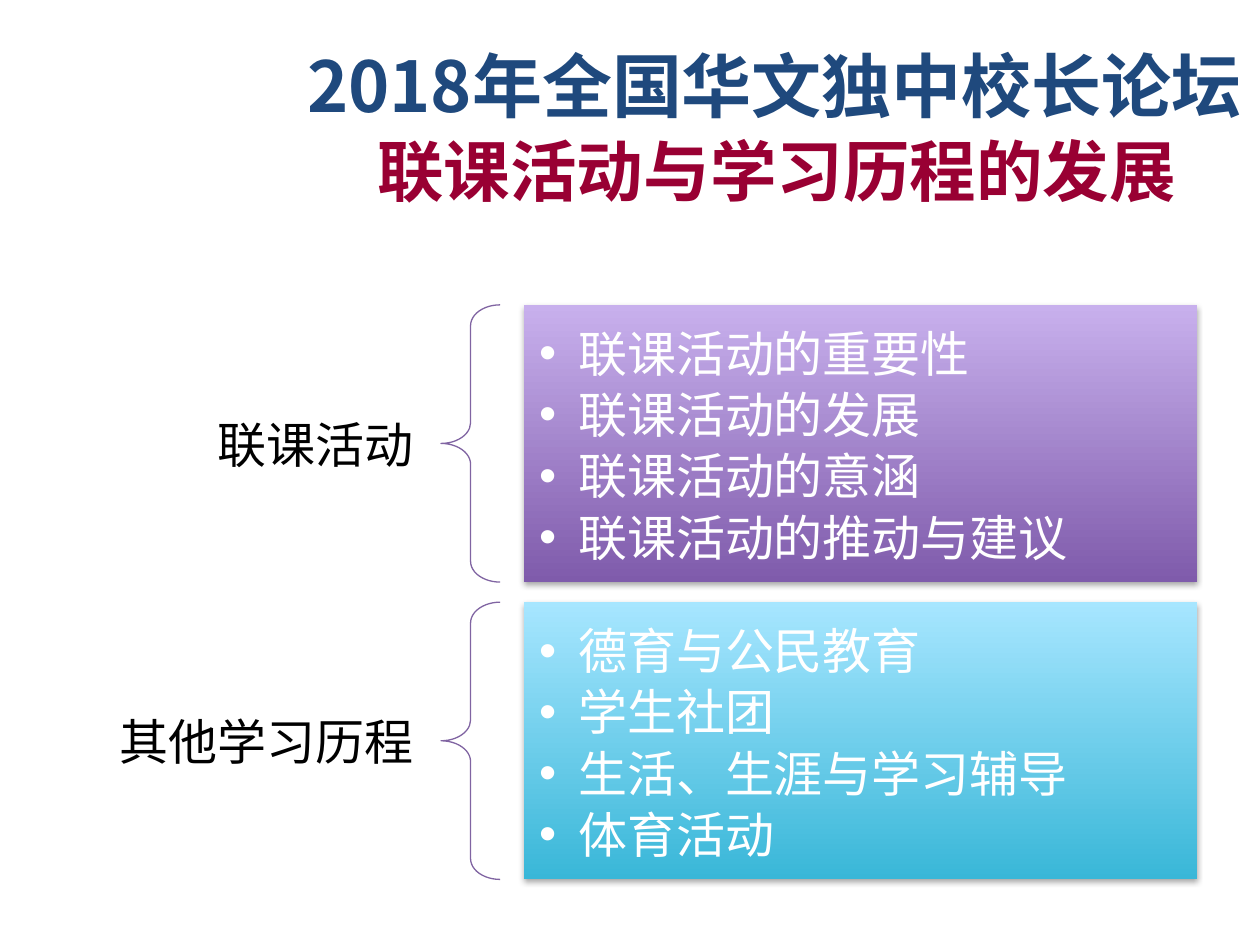
from lxml import etree
from pptx import Presentation
from pptx.dml.color import RGBColor
from pptx.enum import shapes, text
from pptx.oxml import parse_xml
from pptx.oxml.ns import qn
from pptx.util import Inches, Pt

FONT = "Noto Sans CJK SC"
NS = 'xmlns:a="http://schemas.openxmlformats.org/drawingml/2006/main"'
NAVY = RGBColor(0x1F, 0x49, 0x7D)
WINE = RGBColor(0x99, 0x00, 0x33)
BLACK = RGBColor(0, 0, 0)
WHITE = RGBColor(0xFF, 0xFF, 0xFF)
PURPLE = RGBColor(0x80, 0x64, 0xA2)
LILAC = (RGBColor(0x7F, 0x5B, 0xAB), RGBColor(0xC8, 0xB0, 0xED))
AQUA = (RGBColor(0x39, 0xB7, 0xD8), RGBColor(0xA7, 0xE6, 0xFF))
SHADOW = f"""<a:effectLst {NS}><a:outerShdw blurRad="{Pt(3.1)}" dist="{Pt(1.8)}"
 dir="5400000" rotWithShape="0"><a:srgbClr val="000000"><a:alpha val="35000"/>
</a:srgbClr></a:outerShdw></a:effectLst>"""
GROUPS = [
    ("联课活动", LILAC,
     ["联课活动的重要性", "联课活动的发展", "联课活动的意涵", "联课活动的推动与建议"]),
    ("其他学习历程", AQUA,
     ["德育与公民教育", "学生社团", "生活、生涯与学习辅导", "体育活动"]),
]


def style(para, size, color, bold=False):
    """Format every run of a paragraph."""
    for run in para.runs:
        font = run.font
        font.name, font.size, font.bold = FONT, Pt(size), bold
        font.color.rgb = color
        etree.SubElement(font._element, qn("a:ea"), typeface=FONT)


def frame(shape, anchor, side, edge):
    """Set wrapping, anchor and margins, and return the text frame."""
    tf = shape.text_frame
    tf.word_wrap = True
    tf.auto_size = text.MSO_AUTO_SIZE.NONE
    tf.vertical_anchor = anchor
    tf.margin_left = tf.margin_right = Inches(side)
    tf.margin_top = tf.margin_bottom = Inches(edge)
    return tf


def heading(shape, words, size, color):
    """Fill one centred heading line."""
    tf = frame(shape, text.MSO_ANCHOR.TOP, 0.1, 0.05)
    tf.text = words
    para = tf.paragraphs[0]
    para.alignment = text.PP_ALIGN.CENTER
    style(para, size, color, True)


def header(slide):
    """Place the title and the subtitle."""
    title = slide.shapes.title
    title.left, title.top = Inches(2.01), Inches(0.29)
    title.width, title.height = Inches(8.27), Inches(0.77)
    heading(title, "2018年全国华文独中校长论坛", 40, NAVY)
    sub = slide.shapes.add_textbox(
        Inches(2.44), Inches(0.98), Inches(7.45), Inches(0.74))
    heading(sub, "联课活动与学习历程的发展", 38, WINE)


def label(slide, left, top, width, height, words):
    """Place the right-aligned name of a group."""
    box = slide.shapes.add_textbox(left, top, width, height)
    tf = frame(box, text.MSO_ANCHOR.MIDDLE, 0.22, 0.08)
    tf.text = words
    para = tf.paragraphs[0]
    para.alignment = text.PP_ALIGN.RIGHT
    style(para, 28, BLACK)


def brace(slide, left, top, width, height):
    """Place a left brace."""
    shape = slide.shapes.add_shape(
        shapes.MSO_SHAPE.LEFT_BRACE, left, top, width, height)
    shape.adjustments[0] = 0.35
    shape.shadow.inherit = False
    shape.fill.background()
    shape.line.color.rgb = PURPLE
    shape.line.width = Pt(0.75)


def panel(slide, left, top, width, height, colors, items):
    """Place a shaded panel with a bulleted list."""
    shape = slide.shapes.add_shape(
        shapes.MSO_SHAPE.RECTANGLE, left, top, width, height)
    shape.fill.gradient()
    shape.fill.gradient_angle = 90
    for stop, color, place in zip(shape.fill.gradient_stops, colors, (0, 1)):
        stop.color.rgb, stop.position = color, place
    shape.line.fill.background()
    shape._element.spPr.append(parse_xml(SHADOW))
    tf = frame(shape, text.MSO_ANCHOR.MIDDLE, 0.12, 0.12)
    tf.text = "\n".join(items)
    for para in tf.paragraphs:
        props = para._p.get_or_add_pPr()
        props.set("marL", str(Inches(0.31)))
        props.set("indent", str(-Inches(0.31)))
        etree.SubElement(props, qn("a:buFont"), typeface="Arial")
        etree.SubElement(props, qn("a:buChar"), char="•")
        para.alignment = text.PP_ALIGN.LEFT
        para.line_spacing = Pt(35)
        style(para, 28, WHITE)


def group(slide, left, top, height, name, colors, items):
    """Place a label, its brace and its panel in one row."""
    tall = Inches(1.41)
    label(slide, left, top + (height - tall) // 2, Inches(2.91), tall, name)
    brace(slide, left + Inches(2.91), top, Inches(0.47), height)
    panel(slide, left + Inches(3.57), top, Inches(5.34), height, colors, items)


def main():
    """Build and save the slide."""
    prs = Presentation()
    prs.slide_width, prs.slide_height = Inches(10), Inches(7.5)
    slide = prs.slides.add_slide(prs.slide_layouts[5])
    header(slide)
    for row, parts in enumerate(GROUPS):
        top = Inches(2.42) + row * Inches(2.36)
        group(slide, Inches(0.59), top, Inches(2.2), *parts)
    prs.save("out.pptx")


if __name__ == "__main__":
    main()
